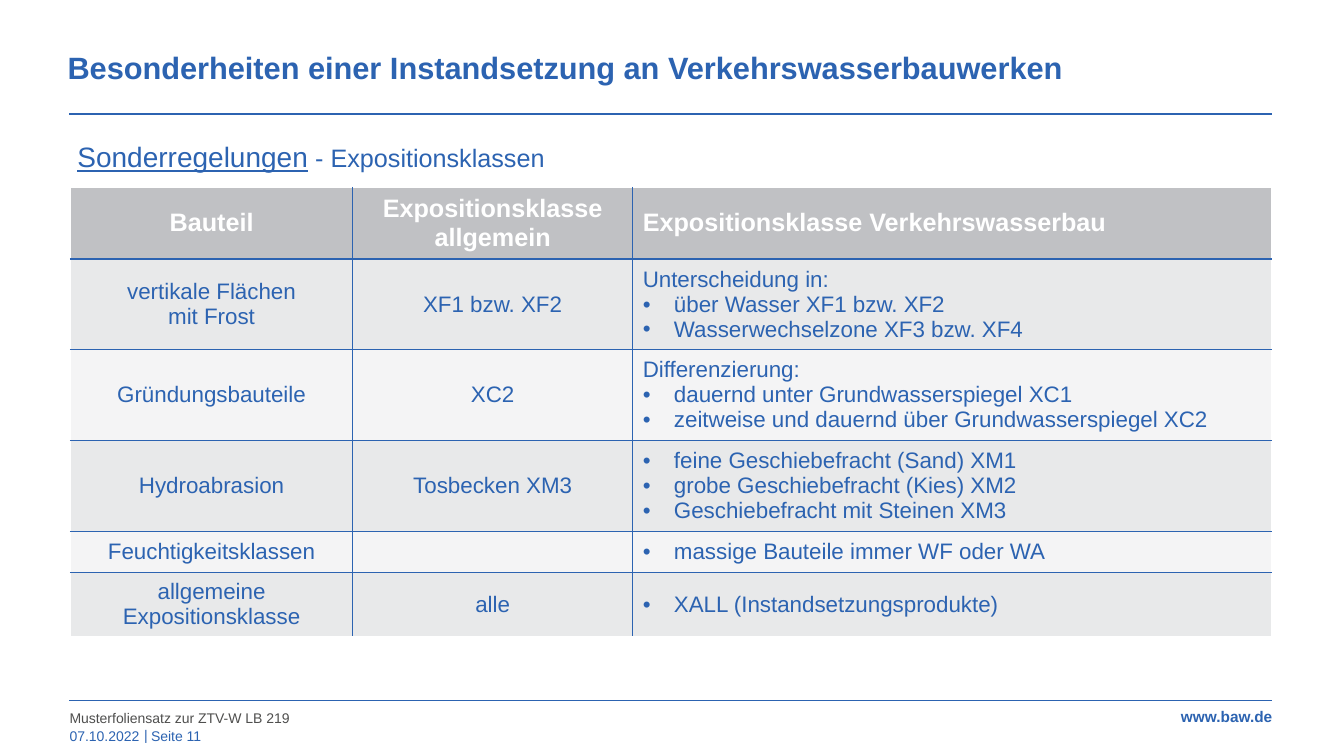
import lxml.etree
import pptx
import pptx.dml.color
import pptx.enum.shapes
import pptx.enum.text
import pptx.oxml.ns
import pptx.util

Inches = pptx.util.Inches
Pt = pptx.util.Pt
qn = pptx.oxml.ns.qn
ALIGN = pptx.enum.text.PP_ALIGN
MIDDLE = pptx.enum.text.MSO_ANCHOR.MIDDLE

BLUE, WHITE, GREY = "2C63B1", "FFFFFF", "4F4F4E"
HEADER_FILL, ROW_FILLS = "C0C1C4", ("E8E9EA", "F4F4F5")
BULLET = "• "

COLUMN_WIDTHS = (2.8, 2.78, 6.34)
ROW_HEIGHTS = (0.71, 0.9, 0.9, 0.9, 0.41, 0.63)
EXPOSURE_ROWS = (
    (["Bauteil"], ["Expositionsklasse", "allgemein"],
     ["Expositionsklasse Verkehrswasserbau"]),
    (["vertikale Flächen", "mit Frost"], ["XF1 bzw. XF2"],
     ["Unterscheidung in:", "• über Wasser XF1 bzw. XF2",
      "• Wasserwechselzone XF3 bzw. XF4"]),
    (["Gründungsbauteile"], ["XC2"],
     ["Differenzierung:", "• dauernd unter Grundwasserspiegel XC1",
      "• zeitweise und dauernd über Grundwasserspiegel XC2"]),
    (["Hydroabrasion"], ["Tosbecken XM3"],
     ["• feine Geschiebefracht (Sand) XM1",
      "• grobe Geschiebefracht (Kies) XM2",
      "• Geschiebefracht mit Steinen XM3"]),
    (["Feuchtigkeitsklassen"], [], ["• massige Bauteile immer WF oder WA"]),
    (["allgemeine Expositionsklasse"], ["alle"],
     ["• XALL (Instandsetzungsprodukte)"]),
)


def rgb(color):
    return pptx.dml.color.RGBColor.from_string(color)


def write_text(paragraph, text, size, color=BLUE, bold=False, underline=False,
               align=ALIGN.LEFT, spacing=None):
    """Append one formatted run to the paragraph."""
    paragraph.alignment = align
    if spacing:
        paragraph.line_spacing = spacing
    run = paragraph.add_run()
    run.text = text
    run.font.name = "Arial"
    run.font.size = Pt(size)
    run.font.bold = bold
    run.font.underline = underline
    run.font.color.rgb = rgb(color)


def add_box(slide, left, top, width, height, wrap=True, margin=0, anchor=MIDDLE):
    """Add an empty text box and return its first paragraph."""
    frame = slide.shapes.add_textbox(
        Inches(left), Inches(top), Inches(width), Inches(height)).text_frame
    frame.word_wrap = wrap
    frame.vertical_anchor = anchor
    frame.margin_left = frame.margin_right = Inches(margin)
    frame.margin_top = frame.margin_bottom = Inches(margin / 2)
    return frame.paragraphs[0]


def add_rule(slide, left, top, width):
    rule = slide.shapes.add_connector(
        pptx.enum.shapes.MSO_CONNECTOR.STRAIGHT,
        Inches(left), Inches(top), Inches(left + width), Inches(top))
    rule.line.color.rgb = rgb(BLUE)
    rule.line.width = Pt(1)
    lxml.etree.SubElement(rule.element.spPr, qn("a:effectLst"))


def add_bullet(paragraph):
    properties = paragraph._p.get_or_add_pPr()
    properties.set("marL", str(Inches(0.31)))
    properties.set("indent", str(-Inches(0.31)))
    lxml.etree.SubElement(properties, qn("a:buFont")).set("typeface", "Arial")
    lxml.etree.SubElement(properties, qn("a:buChar")).set("char", BULLET.strip())


def set_borders(cell, colors):
    """Draw left, right, top and bottom borders, in that order."""
    properties = cell._tc.get_or_add_tcPr()
    for side, color in zip("LRTB", colors):
        border = lxml.etree.SubElement(properties, qn(f"a:ln{side}"))
        border.set("w", str(Pt(1)))
        fill = lxml.etree.SubElement(border, qn("a:solidFill"))
        lxml.etree.SubElement(fill, qn("a:srgbClr")).set("val", color)


def fill_cell(cell, lines, fill, **text_format):
    cell.fill.solid()
    cell.fill.fore_color.rgb = rgb(fill)
    cell.vertical_anchor = MIDDLE
    frame = cell.text_frame
    for index, line in enumerate(lines):
        paragraph = frame.add_paragraph() if index else frame.paragraphs[0]
        if line.startswith(BULLET):
            add_bullet(paragraph)
        write_text(paragraph, line.removeprefix(BULLET), **text_format)


def add_exposure_table(slide, left, top):
    last_row, last_column = len(ROW_HEIGHTS) - 1, len(COLUMN_WIDTHS) - 1
    table = slide.shapes.add_table(
        len(ROW_HEIGHTS), len(COLUMN_WIDTHS), Inches(left), Inches(top),
        Inches(sum(COLUMN_WIDTHS)), Inches(sum(ROW_HEIGHTS))).table
    table.horz_banding = False
    for column, width in zip(table.columns, COLUMN_WIDTHS):
        column.width = Inches(width)
    for row, height in zip(table.rows, ROW_HEIGHTS):
        row.height = Inches(height)
    for r, entries in enumerate(EXPOSURE_ROWS):
        header = r == 0
        for c, lines in enumerate(entries):
            outer_sides = (c == 0, c == last_column, header, r == last_row)
            cell = table.cell(r, c)
            set_borders(cell, [WHITE if outer else BLUE for outer in outer_sides])
            fill_cell(cell, lines, HEADER_FILL if header else ROW_FILLS[(r - 1) % 2],
                      size=18 if header else 16, color=WHITE if header else BLUE,
                      bold=header,
                      align=ALIGN.LEFT if c == last_column else ALIGN.CENTER)


def add_heading(slide, left, top, width):
    title = add_box(slide, left, top, width, 0.47,
                    anchor=pptx.enum.text.MSO_ANCHOR.TOP)
    write_text(title, "Besonderheiten einer Instandsetzung an Verkehrswasserbauwerken",
               22, bold=True, spacing=1.1)
    add_rule(slide, left + 0.02, top + 0.68, width - 0.01)
    subtitle = add_box(slide, left, top + 0.72, width, 0.61, margin=0.1,
                       anchor=pptx.enum.text.MSO_ANCHOR.TOP)
    write_text(subtitle, "Sonderregelungen", 20, underline=True, spacing=1.5)
    write_text(subtitle, " - Expositionsklassen", 18, spacing=1.5)


def add_footer(slide, left, top, width):
    add_rule(slide, left, top, width)
    address = add_box(slide, left + width - 0.98, top + 0.08, 0.98, 0.16)
    write_text(address, "www.baw.de", 11, bold=True, align=ALIGN.RIGHT)
    for text, dx, dy, box_width, color in (
            ("Musterfoliensatz zur ZTV-W LB 219", 0, 0.09, 10.79, GREY),
            ("07.10.2022", 0, 0.27, 0.71, BLUE),
            ("|", 0.74, 0.26, 0.04, BLUE),
            ("Seite 11", 0.81, 0.27, 0.71, BLUE)):
        note = add_box(slide, left + dx, top + dy, box_width, 0.16, wrap=False)
        write_text(note, text, 10, color=color)


def main():
    presentation = pptx.Presentation()
    presentation.slide_width = Inches(13.34)
    presentation.slide_height = Inches(7.5)
    slide = presentation.slides.add_slide(presentation.slide_layouts[6])
    add_heading(slide, 0.67, 0.45, 11.95)
    add_exposure_table(slide, 0.7, 1.86)
    add_footer(slide, 0.69, 6.95, 11.94)
    presentation.save("out.pptx")


if __name__ == "__main__":
    main()
